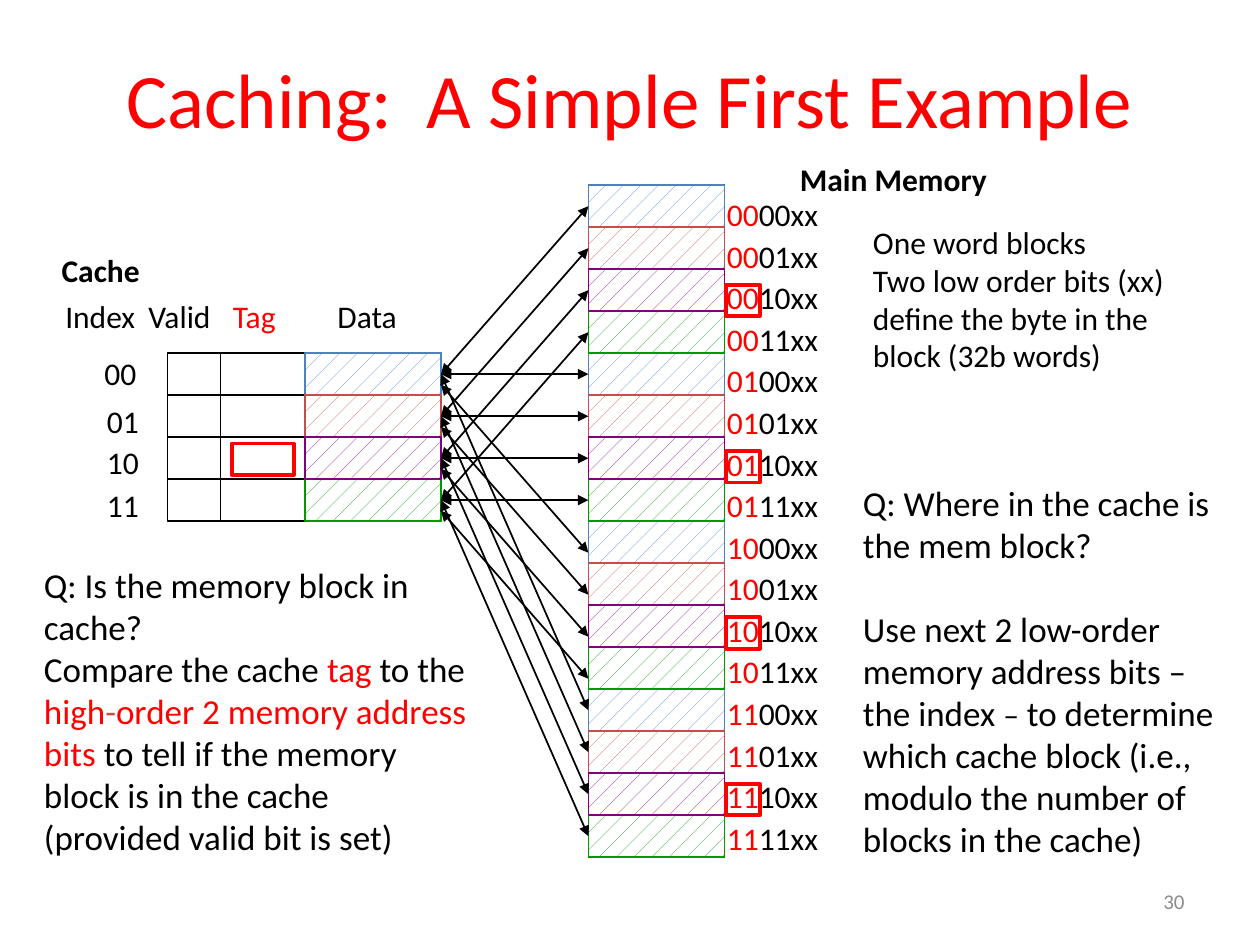
from pptx import Presentation
from pptx.dml.color import RGBColor
from pptx.enum.dml import MSO_PATTERN
from pptx.enum.shapes import MSO_CONNECTOR, MSO_SHAPE
from pptx.enum.text import MSO_ANCHOR, MSO_AUTO_SIZE, PP_ALIGN
from pptx.oxml.ns import qn
from pptx.util import Inches, Pt
from lxml.etree import SubElement

BLACK = RGBColor(0x00, 0x00, 0x00)
WHITE = RGBColor(0xFF, 0xFF, 0xFF)
GRAY = RGBColor(0x8C, 0x8C, 0x8C)
RED = RGBColor(0xFF, 0x00, 0x00)
BLUE = RGBColor(0x4F, 0x81, 0xBD)
BRICK = RGBColor(0xC0, 0x50, 0x4D)
PURPLE = RGBColor(0x80, 0x00, 0x80)
GREEN = RGBColor(0x00, 0x99, 0x00)

ROW = Inches(1) / 3
MEMORY_TOP = Inches(1.47)
VALID, TAG, DATA, CACHE_END = [Inches(x) for x in (1.33, 1.75, 2.42, 3.5)]
MEMORY, MEMORY_END = Inches(4.67), Inches(5.75)
CACHE_ROWS, MEMORY_ROWS = 4, 16
CACHE_TOP_ROW = 4

deck = Presentation()
deck.slide_width, deck.slide_height = Inches(10), Inches(7.5)
slide = deck.slides.add_slide(deck.slide_layouts[5])
shapes = slide.shapes


def add_text(left, top, width, height, paragraphs, size=18, wrap=True):
    box = shapes.add_textbox(Inches(left), Inches(top), Inches(width), Inches(height))
    frame = box.text_frame
    frame.word_wrap = wrap
    frame.auto_size = MSO_AUTO_SIZE.SHAPE_TO_FIT_TEXT
    for index, pieces in enumerate(paragraphs):
        paragraph = frame.paragraphs[0] if index == 0 else frame.add_paragraph()
        for words, color in pieces:
            if words.startswith("(provided"):
                paragraph.add_line_break()
            run = paragraph.add_run()
            run.text = words
            run.font.name = "Calibri"
            run.font.size = Pt(size)
            run.font.color.rgb = color
    return frame


def add_line(x1, row1, x2, row2, arrows=False):
    y1, y2 = [round(MEMORY_TOP + row * ROW) for row in (row1, row2)]
    line = shapes.add_connector(MSO_CONNECTOR.STRAIGHT, x1, y1, x2, y2)
    line.line.color.rgb = BLACK
    line.line.width = Pt(1)
    if arrows:
        stroke = line.line._get_or_add_ln()
        for end in ("a:headEnd", "a:tailEnd"):
            SubElement(stroke, qn(end)).set("type", "triangle")
    SubElement(line._element.spPr, qn("a:effectLst"))


title = shapes.title
title.left, title.top, title.width, title.height = [Inches(x) for x in (0.5, 0.3, 9, 0.95)]
title.text_frame.text = "Caching:  A Simple First Example"
title.text_frame.vertical_anchor = MSO_ANCHOR.MIDDLE
title.text_frame.paragraphs[0].alignment = PP_ALIGN.CENTER
title_font = title.text_frame.paragraphs[0].runs[0].font
title_font.name, title_font.size, title_font.color.rgb = "Calibri", Pt(44), RED

for left, right in ((VALID, TAG), (TAG, DATA), (DATA, CACHE_END)):
    column = shapes.add_shape(MSO_SHAPE.RECTANGLE, left, round(MEMORY_TOP + CACHE_TOP_ROW * ROW),
                              right - left, round(CACHE_ROWS * ROW))
    column.shadow.inherit = False
    column.fill.background()
    column.line.color.rgb = BLACK
    column.line.width = Pt(1)
    for divider in range(CACHE_TOP_ROW + 1, CACHE_TOP_ROW + CACHE_ROWS):
        add_line(left, divider, right, divider)

for row in range(MEMORY_ROWS + 1):
    add_line(MEMORY, row, MEMORY_END, row)
add_line(MEMORY, 0, MEMORY, 12)
add_line(MEMORY_END, 0, MEMORY_END, MEMORY_ROWS)

for index, color in ((0, BLUE), (3, GREEN), (1, BRICK), (2, PURPLE)):
    places = [(MEMORY, row) for row in range(index, MEMORY_ROWS, CACHE_ROWS)]
    for left, row in places + [(DATA, CACHE_TOP_ROW + index)]:
        block = shapes.add_shape(MSO_SHAPE.RECTANGLE, left, round(MEMORY_TOP + row * ROW),
                                 CACHE_END - DATA, round(ROW))
        block.shadow.inherit = False
        block.fill.patterned()
        block.fill.pattern = MSO_PATTERN.PERCENT_5
        block.fill.fore_color.rgb = color
        block.fill.back_color.rgb = WHITE
        block.line.color.rgb = color
        block.line.width = Pt(1)

for row in range(MEMORY_ROWS):
    middle = 0.75 if row // CACHE_ROWS == 2 else 0.5
    add_line(MEMORY, row + middle, CACHE_END, CACHE_TOP_ROW + row % CACHE_ROWS + middle, arrows=True)

for label, left, top, width, color in (
    ("00", 0.73, 2.76, 0.48, BLACK),
    ("01", 0.75, 3.14, 0.48, BLACK),
    ("10", 0.75, 3.47, 0.48, BLACK),
    ("11", 0.75, 3.81, 0.48, BLACK),
    ("Index", 0.42, 2.31, 0.81, BLACK),
    ("Valid", 1.08, 2.31, 0.76, BLACK),
    ("Tag", 1.75, 2.31, 0.54, RED),
    ("Data", 2.58, 2.31, 0.73, BLACK),
    ("Cache", 0.39, 1.94, 0.95, BLACK),
    ("Main Memory", 6.25, 1.22, 1.8, BLACK),
):
    heading = add_text(left, top, width, 0.4, [[(label, color)]], wrap=False)
    if label in ("Cache", "Main Memory"):
        heading.paragraphs[0].runs[0].font.bold = True

addresses = add_text(5.67, 1.47, 1.08, 5.38, [
    [(f"{row // 4:02b}", RED), (f"{row % 4:02b}xx", BLACK)] for row in range(MEMORY_ROWS)
])
for address in addresses.paragraphs:
    address.line_spacing = 1.1

add_text(6.83, 1.72, 2.75, 1.31, [
    [("One word blocks", BLACK)],
    [("Two low order bits (xx) define the byte in the block (32b words)", BLACK)],
])
where = add_text(6.75, 3.77, 3, 3.13, [
    [("Q: Where in the cache is the mem block?", BLACK)],
    [("Use next 2 low-order memory address bits – the index ", BLACK), ("–", BLACK),
     (" to determine which cache block (i.e., modulo the number of blocks in the cache)", BLACK)],
], size=20)
where.paragraphs[1].space_before = Pt(24)
where.paragraphs[1].runs[1].font.size = Pt(18)

add_text(0.25, 4.42, 3.59, 2.46, [
    [("Q: Is the memory block in cache?", BLACK)],
    [("Compare the cache ", BLACK), ("tag ", RED), ("to the ", BLACK), ("high", RED), ("-", BRICK),
     ("order 2 memory address bits ", RED), ("to tell if the memory block is in the cache ", BLACK),
     ("(provided valid bit is set)", BLACK)],
], size=20)

tag_marks = [(5.76, 2.26 + 1.32 * group, 0.27) for group in range(4)]
for left, top, width in [(1.84, 3.52, 0.49)] + tag_marks:
    mark = shapes.add_shape(MSO_SHAPE.RECTANGLE, Inches(left), Inches(top), Inches(width), Inches(0.25))
    mark.shadow.inherit = False
    mark.fill.background()
    mark.line.color.rgb = RED
    mark.line.width = Pt(2.25)

page = add_text(7.17, 6.95, 2.33, 0.4, [[("30", GRAY)]], size=12)
page.auto_size = MSO_AUTO_SIZE.NONE
page.vertical_anchor = MSO_ANCHOR.MIDDLE
page.paragraphs[0].alignment = PP_ALIGN.RIGHT

deck.save("out.pptx")
